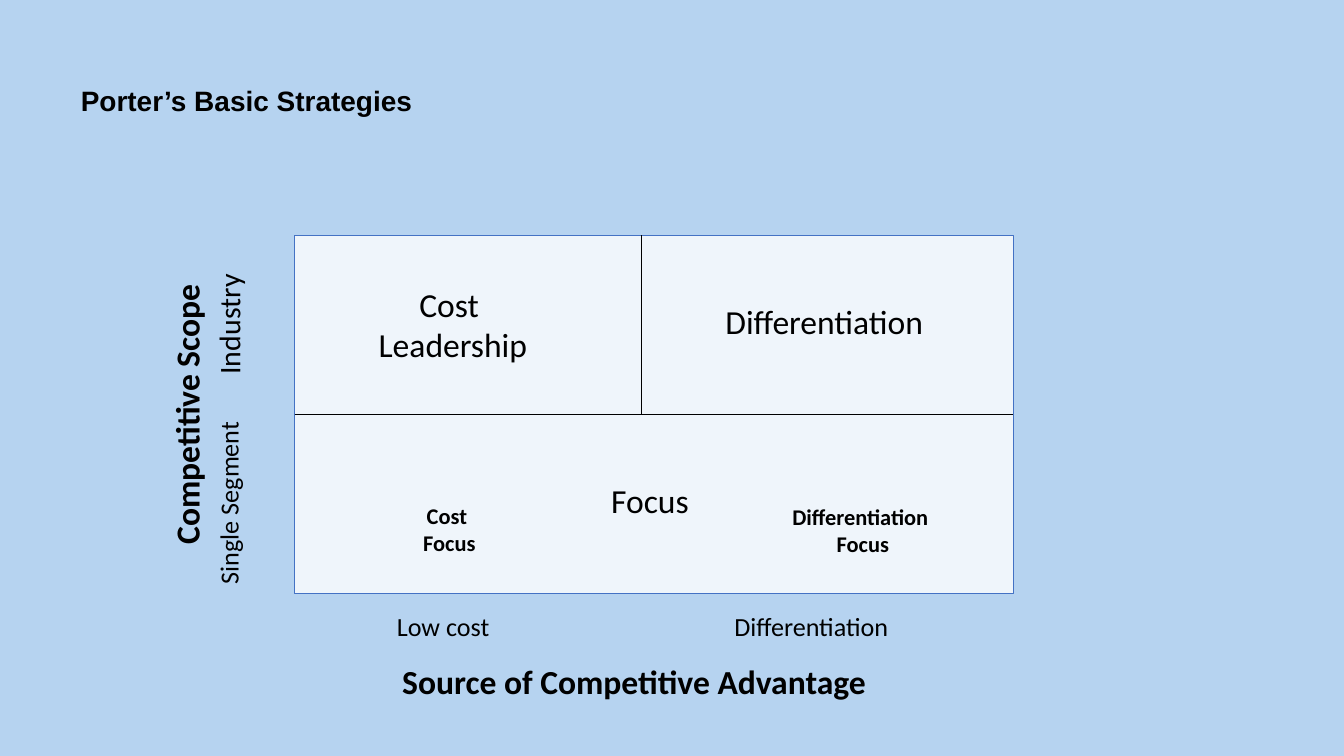
"""Build a slide of Porter's basic strategies as a scope and advantage matrix."""
import dataclasses

import pptx
import pptx.dml.color
import pptx.enum.shapes
import pptx.enum.text
import pptx.oxml
import pptx.oxml.ns
import pptx.shapes.autoshape
import pptx.shapes.connector
import pptx.slide
import pptx.util

SCALE = 9525
SKY = pptx.dml.color.RGBColor(0xB6, 0xD3, 0xF0)
PALE = pptx.dml.color.RGBColor(0xEF, 0xF5, 0xFB)
BLUE = pptx.dml.color.RGBColor(0x44, 0x72, 0xC4)
BLACK = pptx.dml.color.RGBColor(0, 0, 0)
CENTER = pptx.enum.text.PP_ALIGN.CENTER
LEFT = pptx.enum.text.PP_ALIGN.LEFT
TOP = pptx.enum.text.MSO_ANCHOR.TOP
BOTTOM = pptx.enum.text.MSO_ANCHOR.BOTTOM


@dataclasses.dataclass(frozen=True)
class Box:
    """A rectangle in px."""
    left: int
    top: int
    width: int
    height: int

    def emu(self) -> tuple[int, ...]:
        """Give the four lengths in EMU."""
        return tuple(n * SCALE for n in dataclasses.astuple(self))


@dataclasses.dataclass(frozen=True)
class Label:
    """A text box with one format; each line of text is a paragraph."""
    text: str
    box: Box
    size: int
    bold: bool = False
    turn: int = 0
    font: str = "Calibri"
    align: pptx.enum.text.PP_ALIGN = CENTER
    anchor: pptx.enum.text.MSO_ANCHOR = TOP
    space: float = 1.0


GRID = Box(421, 336, 1026, 511)
SPLIT = 917
MIDDLE = GRID.top + GRID.height // 2

LABELS = (
    Label("Porter’s Basic Strategies", Box(106, 112, 1710, 60), 30, True,
          font="Arial", align=LEFT, anchor=BOTTOM, space=0.9),
    Label("Source of Competitive Advantage", Box(468, 940, 876, 68), 36, True),
    Label("Low cost", Box(421, 867, 424, 55), 28),
    Label("Differentiation", Box(947, 867, 424, 55), 28),
    Label("Competitive Scope", Box(11, 558, 511, 68), 36, True, 270),
    Label("Single Segment", Box(199, 691, 255, 55), 28, turn=270),
    Label("Industry", Box(199, 433, 255, 61), 32, turn=270),
    Label("Cost \nLeadership", Box(475, 401, 344, 126), 36),
    Label("Differentiation", Box(984, 425, 387, 68), 36),
    Label("Focus", Box(499, 681, 859, 68), 36),
    Label("Cost \nFocus", Box(420, 713, 444, 87), 24, True),
    Label("Differentiation\n Focus", Box(1007, 714, 444, 87), 24, True),
)


def apply(target: object, values: dict[str, object]) -> None:
    """Set each named attribute on the target."""
    for name, value in values.items():
        setattr(target, name, value)


def draw_grid(slide: pptx.slide.Slide) -> pptx.shapes.autoshape.Shape:
    """Draw the matrix frame."""
    frame = slide.shapes.add_shape(
        pptx.enum.shapes.MSO_SHAPE.RECTANGLE, *GRID.emu())
    frame.shadow.inherit = False
    frame.fill.solid()
    frame.fill.fore_color.rgb = PALE
    frame.line.color.rgb = BLUE
    frame.line.width = pptx.util.Pt(0.5)
    return frame


def draw_rule(slide: pptx.slide.Slide, left: int, top: int, right: int,
              bottom: int) -> pptx.shapes.connector.Connector:
    """Draw a black line between two points."""
    ends = (n * SCALE for n in (left, top, right, bottom))
    rule = slide.shapes.add_connector(
        pptx.enum.shapes.MSO_CONNECTOR.STRAIGHT, *ends)
    rule.line.color.rgb = BLACK
    rule.line.width = pptx.util.Pt(1)
    rule._element.spPr.append(
        pptx.oxml.parse_xml(f"<a:effectLst {pptx.oxml.ns.nsdecls('a')}/>"))
    return rule


def draw_label(slide: pptx.slide.Slide, label: Label) -> None:
    """Draw one text label."""
    shape = slide.shapes.add_textbox(*label.box.emu())
    shape.rotation = label.turn
    frame = shape.text_frame
    apply(frame, {"word_wrap": True, "vertical_anchor": label.anchor,
                  "text": label.text})
    for para in frame.paragraphs:
        apply(para, {"alignment": label.align, "line_spacing": label.space})
        for run in para.runs:
            apply(run.font, {"name": label.font, "bold": label.bold,
                             "size": pptx.util.Pt(label.size)})
            run.font.color.rgb = BLACK


def main() -> None:
    """Build and save the slide."""
    deck = pptx.Presentation()
    apply(deck, {"slide_width": 1920 * SCALE, "slide_height": 1080 * SCALE})
    slide = deck.slides.add_slide(deck.slide_layouts[6])
    slide.background.fill.solid()
    slide.background.fill.fore_color.rgb = SKY
    frame = draw_grid(slide)
    draw_rule(slide, SPLIT, GRID.top, SPLIT, MIDDLE)
    cross = draw_rule(slide, GRID.left, MIDDLE, GRID.left + GRID.width, MIDDLE)
    cross.begin_connect(frame, 1)
    cross.end_connect(frame, 3)
    for label in LABELS:
        draw_label(slide, label)
    deck.save("out.pptx")


if __name__ == "__main__":
    main()
